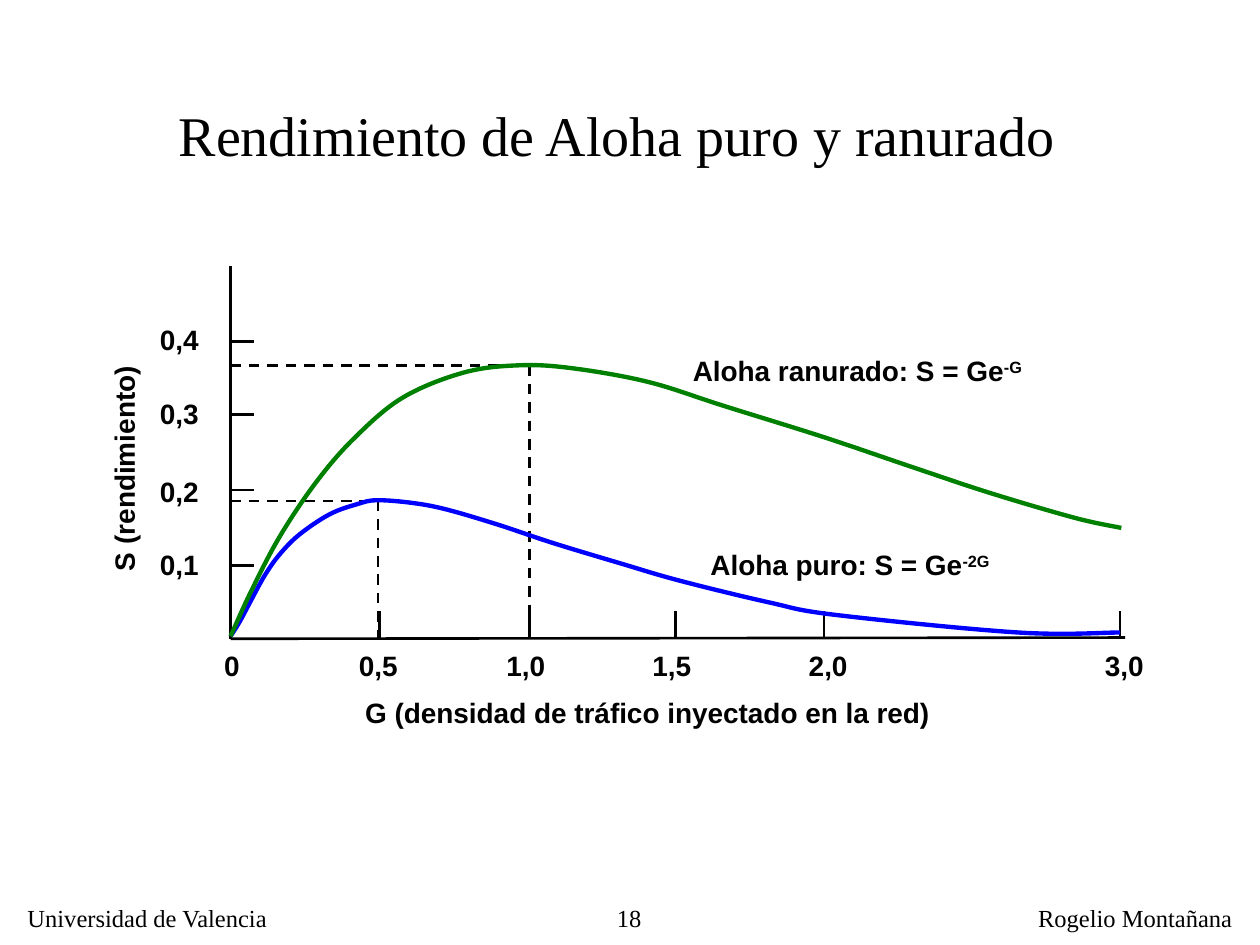
from lxml.etree import SubElement
from pptx import Presentation
from pptx.dml.color import RGBColor
from pptx.enum.dml import MSO_LINE
from pptx.enum.shapes import MSO_CONNECTOR
from pptx.enum.text import MSO_AUTO_SIZE, PP_ALIGN
from pptx.oxml.ns import qn
from pptx.util import Inches, Pt

BLACK = RGBColor(0x00, 0x00, 0x00)
BLUE = RGBColor(0x00, 0x00, 0xFF)
GREEN = RGBColor(0x00, 0x80, 0x00)
SANS = "Arial"
SERIF = "Times New Roman"

COLUMNS, ROWS = 100, 75
CELL = Inches(10) // COLUMNS
ORIGIN_X, ORIGIN_Y = 18.3, 50.7
AXIS_TOP, AXIS_END = 21.1, 89.3
TICK_X, TICK_Y = 1.8, 2.1
LABEL_WIDTH, LABEL_HEIGHT = 5.1, 3.7
G_LABEL_TOP, S_LABEL_LEFT = 51, 11.7
G_TICKS = [("0,5", 30.1, 27.5), ("1,0", 42, 39.2), ("1,5", 53.6, 50.8),
           ("2,0", 65.4, 63.2), ("3,0", 88.9, 86.7)]
S_TICKS = [("0,1", 44.9, 43), ("0,2", 38.9, 37.2),
           ("0,3", 32.9, 31), ("0,4", 27.1, 25.1)]
PEAKS = [(30, 39.75), (42, 29)]

PURE_KNOTS = [
    (18.3, 50.5), (19, 49.4), (19.8, 47.9), (21, 45.7), (22.2, 44), (23.8, 42.4),
    (26.2, 40.8), (28.4, 40), (29.9, 39.7), (32.6, 39.9), (35.3, 40.4),
    (39.4, 41.6), (43.9, 43.1), (49.2, 44.7), (54, 46.1), (61, 47.8),
    (66.3, 48.8), (80.8, 50.2), (88.9, 50.2),
]
SLOTTED_KNOTS = [
    (18.3, 50.5), (20, 46.8), (22.2, 42.6), (25, 38.4), (28, 34.9), (31.9, 31.6),
    (36.7, 29.6), (41, 29), (45.2, 29.2), (51.4, 30.3), (57.4, 32.2),
    (65.4, 34.7), (72.2, 37), (78.5, 39.1), (85.3, 41.1), (89, 41.9),
]


def cells(count):
    return round(count * CELL)


def add_text(slide, text, left, top, width=LABEL_WIDTH, height=LABEL_HEIGHT, *,
             size=16, font=SANS, bold=True, align=PP_ALIGN.LEFT, rotation=0,
             exponent="", wrap=False):
    box = slide.shapes.add_textbox(*map(cells, (left, top, width, height)))
    box.rotation = rotation
    frame = box.text_frame
    frame.word_wrap = wrap
    frame.auto_size = MSO_AUTO_SIZE.NONE if wrap else MSO_AUTO_SIZE.SHAPE_TO_FIT_TEXT
    paragraph = frame.paragraphs[0]
    paragraph.alignment = align
    for content in filter(None, (text, exponent)):
        run = paragraph.add_run()
        run.text = content
        run.font.name = font
        run.font.size = Pt(size)
        run.font.bold = bold
        run.font.color.rgb = BLACK
    if exponent:
        run.font._element.set("baseline", "30000")


def add_line(slide, x1, y1, x2, y2, dashed=False):
    line = slide.shapes.add_connector(
        MSO_CONNECTOR.STRAIGHT, *map(cells, (x1, y1, x2, y2)))
    line.line.color.rgb = BLACK
    line.line.width = Pt(1.5)
    if dashed:
        line.line.dash_style = MSO_LINE.DASH
    SubElement(line._element.spPr, qn("a:effectLst"))


def control_point(point, previous, following, share):
    return tuple(round(p + (f - b) * share)
                 for p, b, f in zip(point, previous, following))


def smooth_outline(shape):
    outline = next(shape._element.iter(qn("a:path")))
    knots = [(int(point.get("x")), int(point.get("y")))
             for point in outline.iter(qn("a:pt"))]
    for segment in outline.findall(qn("a:lnTo")):
        outline.remove(segment)
    padded = [knots[0], *knots, knots[-1]]
    for before, start, end, after in zip(padded, padded[1:], padded[2:], padded[3:]):
        bezier = SubElement(outline, qn("a:cubicBezTo"))
        for x, y in (control_point(start, before, end, 1 / 6),
                     control_point(end, start, after, -1 / 6), end):
            SubElement(bezier, qn("a:pt"), x=str(x), y=str(y))


def add_curve(slide, knots, color):
    points = [(cells(x), cells(y)) for x, y in knots]
    builder = slide.shapes.build_freeform(*points[0])
    builder.add_line_segments(points[1:], close=False)
    curve = builder.convert_to_shape()
    smooth_outline(curve)
    curve.shadow.inherit = False
    curve.fill.background()
    curve.line.color.rgb = color
    curve.line.width = Pt(2.5)


def add_axes(slide):
    add_line(slide, ORIGIN_X, AXIS_TOP, ORIGIN_X, ORIGIN_Y)
    add_line(slide, ORIGIN_X, ORIGIN_Y, AXIS_END, ORIGIN_Y - 0.1)
    for _, y, _ in S_TICKS:
        add_line(slide, ORIGIN_X + 0.1, y, ORIGIN_X + 0.1 + TICK_X, y)
    for _, x, _ in G_TICKS:
        add_line(slide, x, ORIGIN_Y - 0.1 - TICK_Y, x, ORIGIN_Y - 0.1)


def add_peak_guides(slide):
    for x, y in PEAKS:
        add_line(slide, ORIGIN_X, y, x, y, dashed=True)
        add_line(slide, x, y, x, ORIGIN_Y, dashed=True)


def add_labels(slide):
    add_text(slide, "G (densidad de tráfico inyectado en la red)", 28, 54.7, 47)
    add_text(slide, "0", 16.8, G_LABEL_TOP, 3.2)
    for text, _, left in G_TICKS:
        add_text(slide, text, left, G_LABEL_TOP)
    for text, _, top in S_TICKS:
        add_text(slide, text, S_LABEL_LEFT, top)
    add_text(slide, "S (rendimiento)", 0.7, 35.3, 18.3, rotation=270)


def add_footer(slide):
    style = {"size": 14, "font": SERIF, "bold": False}
    add_text(slide, "18", 41.3, 71.2, 10.6, 3.1, align=PP_ALIGN.RIGHT, wrap=True,
             **style)
    add_text(slide, "Universidad de Valencia", 1.2, 71.2, 21.3, 3.3, **style)
    add_text(slide, "Rogelio Montañana", 81.4, 71.2, 17.4, 3.3, **style)


def main():
    presentation = Presentation()
    presentation.slide_width = cells(COLUMNS)
    presentation.slide_height = cells(ROWS)
    slide = presentation.slides.add_slide(presentation.slide_layouts[6])
    add_footer(slide)
    add_axes(slide)
    add_peak_guides(slide)
    add_curve(slide, PURE_KNOTS, BLUE)
    add_curve(slide, SLOTTED_KNOTS, GREEN)
    add_labels(slide)
    add_text(slide, "Rendimiento de Aloha puro y ranurado", 13.2, 7.5, 71.8, 6.3,
             size=32, font=SERIF, bold=False)
    add_text(slide, "Aloha ranurado: S = Ge", 54, 27.6, 28.5, exponent="-G")
    add_text(slide, "Aloha puro: S = Ge", 55.4, 43, 24.6, exponent="-2G")
    presentation.save("out.pptx")


if __name__ == "__main__":
    main()
